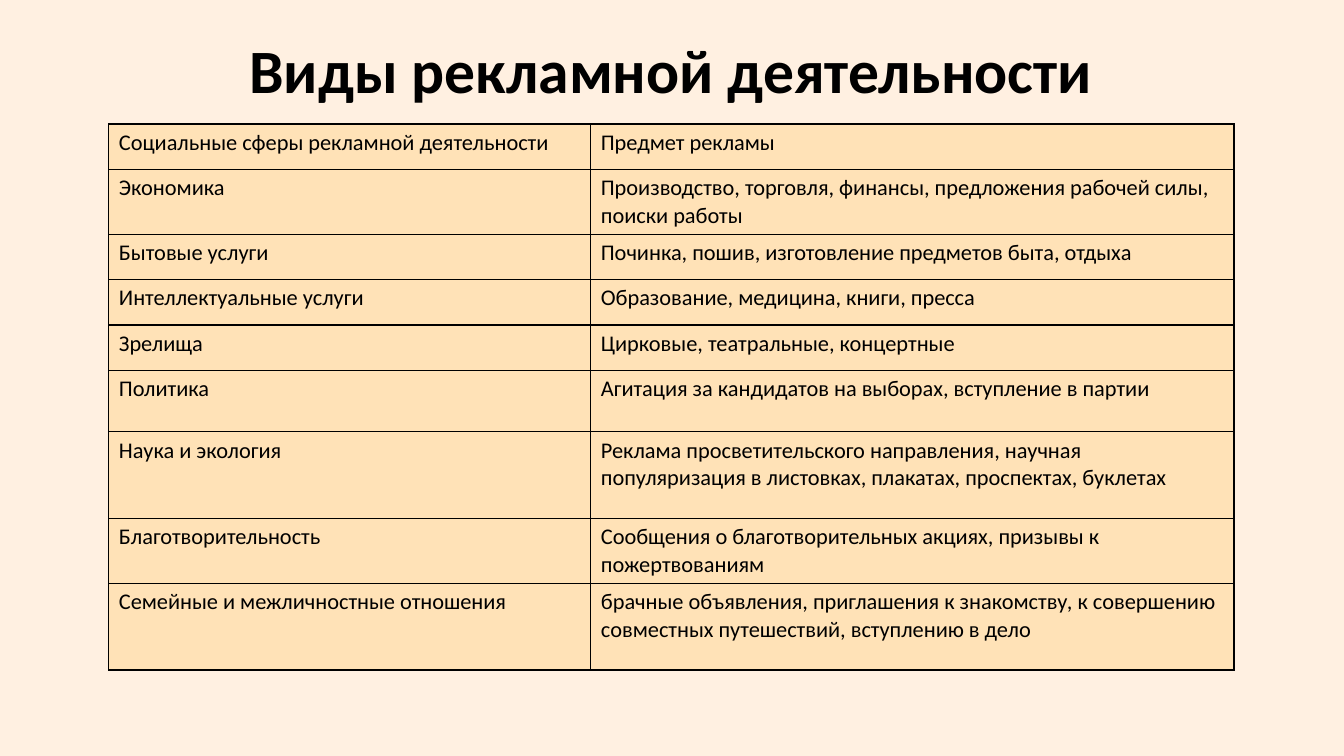
"""Builds a slide with a table of the kinds of advertising activity."""
from lxml.etree import SubElement
from pptx import Presentation
from pptx.dml.color import RGBColor
from pptx.enum.text import MSO_ANCHOR as Anchor, PP_ALIGN as Align
from pptx.oxml.ns import qn
from pptx.util import Pt

PX = 9144
COLORS = {"background": "FFF0E1", "cell": "FFE2B7", "ink": "000000"}
COLUMN_WIDTHS = [478, 638]
SPHERES = [
    (45, "Социальные сферы рекламной деятельности", "Предмет рекламы"),
    (61, "Экономика",
     "Производство, торговля, финансы, предложения рабочей силы, поиски работы"),
    (45, "Бытовые услуги", "Починка, пошив, изготовление предметов быта, отдыха"),
    (45, "Интеллектуальные услуги", "Образование, медицина, книги, пресса"),
    (45, "Зрелища", "Цирковые, театральные, концертные"),
    (61, "Политика", "Агитация за кандидатов на выборах, вступление в партии"),
    (86, "Наука и экология",
     "Реклама просветительского направления, научная популяризация "
     "в листовках, плакатах, проспектах, буклетах"),
    (61, "Благотворительность",
     "Сообщения о благотворительных акциях, призывы к пожертвованиям"),
    (86, "Семейные и межличностные отношения",
     "брачные объявления, приглашения к знакомству, к совершению "
     "совместных путешествий, вступлению в дело"),
]


def write(frame, text, size=16, bold=False, align=Align.LEFT, spacing=1.0):
    frame.word_wrap = True
    paragraph = frame.paragraphs[0]
    paragraph.alignment = align
    paragraph.line_spacing = spacing
    run = paragraph.add_run()
    run.text = text
    run.font.name = "Calibri"
    run.font.size = Pt(size)
    run.font.bold = bold
    run.font.color.rgb = RGBColor.from_string(COLORS["ink"])


class Deck:
    def __init__(self, width, height):
        self.show = Presentation()
        self.show.slide_width = width * PX
        self.show.slide_height = height * PX
        self.slide = self.show.slides.add_slide(self.show.slide_layouts[5])
        self.paint(self.slide.background.fill, "background")

    def paint(self, fill, color):
        fill.solid()
        fill.fore_color.rgb = RGBColor.from_string(COLORS[color])

    def title(self, text, left, top, width, height):
        heading = self.slide.shapes.title
        heading.left, heading.top = left * PX, top * PX
        heading.width, heading.height = width * PX, height * PX
        heading.text_frame.vertical_anchor = Anchor.MIDDLE
        write(heading.text_frame, text, size=44, bold=True,
              align=Align.CENTER, spacing=0.9)

    def border(self, cell):
        properties = cell._tc.get_or_add_tcPr()
        for side in ("a:lnL", "a:lnR", "a:lnT", "a:lnB"):
            line = SubElement(properties, qn(side), w=str(Pt(1)))
            ink = SubElement(line, qn("a:solidFill"))
            SubElement(ink, qn("a:srgbClr"), val=COLORS["ink"])

    def table(self, rows, widths, left, top):
        height = sum(row[0] for row in rows)
        grid = self.slide.shapes.add_table(
            len(rows), len(widths), left * PX, top * PX,
            sum(widths) * PX, height * PX).table
        grid.first_row = grid.horz_banding = False
        for column, width in zip(grid.columns, widths):
            column.width = width * PX
        for line, (row_height, *texts) in zip(grid.rows, rows):
            line.height = row_height * PX
            for cell, text in zip(line.cells, texts):
                self.border(cell)
                self.paint(cell.fill, "cell")
                write(cell.text_frame, text)


def main():
    deck = Deck(1333, 750)
    deck.title("Виды рекламной деятельности", 91, 0, 1150, 145)
    deck.table(SPHERES, COLUMN_WIDTHS, 108, 123)
    deck.show.save("out.pptx")


if __name__ == "__main__":
    main()
